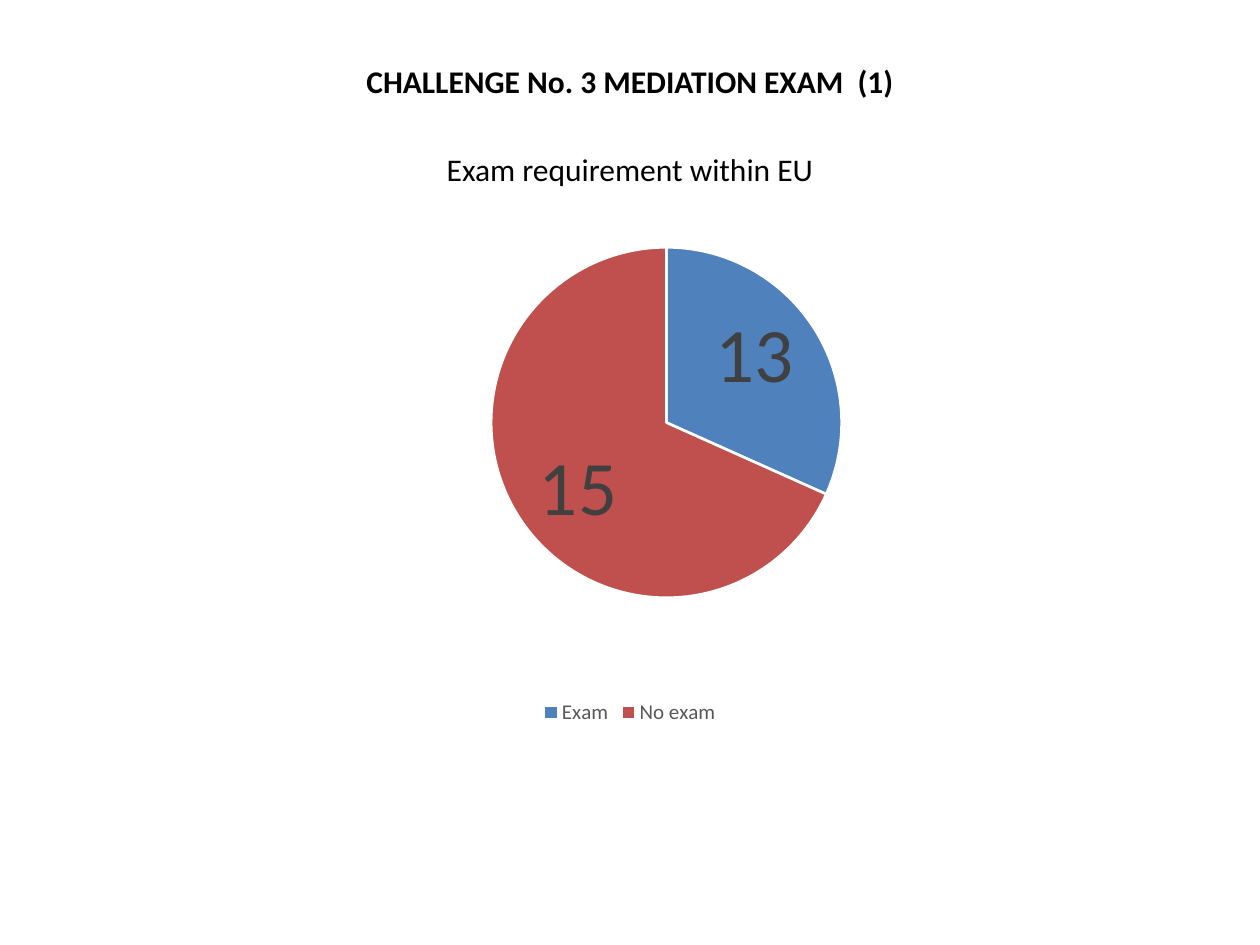
"""Build a slide with a pie chart of the mediation exam requirement within the EU."""
import lxml.etree
import pptx
import pptx.chart.data
import pptx.dml.color
import pptx.enum.chart
import pptx.enum.text
import pptx.oxml.ns
import pptx.util

RGB = pptx.dml.color.RGBColor
BLACK = RGB(0x00, 0x00, 0x00)
WHITE = RGB(0xFF, 0xFF, 0xFF)
BLUE = RGB(0x4F, 0x81, 0xBD)
RED = RGB(0xC0, 0x50, 0x4D)
DARK = RGB(0x40, 0x40, 0x40)
GREY = RGB(0x59, 0x59, 0x59)
FACE = "Calibri"

TITLE = "CHALLENGE No. 3 MEDIATION EXAM  (1)"
HEAD = "Exam requirement within EU"
PARTS = [("Exam", 13, "13", BLUE), ("No exam", 28, "15", RED)]
PLOT = {"x": 0.19, "y": 0.05, "w": 0.78, "h": 0.69}

TITLE_BOX = (54, 56, 1152, 50)
HEAD_BOX = (54, 144, 1152, 50)
CHART_BOX = (402, 222, 456, 508)


def px(num):
    return pptx.util.Emu(round(num * 914400 / 126))


def style(font, size, color, bold=False):
    font.name = FACE
    font.size = pptx.util.Pt(size)
    font.bold = bold
    font.color.rgb = color


def write(shape, box, text, bold):
    shape.left, shape.top, shape.width, shape.height = map(px, box)
    frame = shape.text_frame
    frame.word_wrap = True
    frame.vertical_anchor = pptx.enum.text.MSO_ANCHOR.MIDDLE
    para = frame.paragraphs[0]
    para.alignment = pptx.enum.text.PP_ALIGN.CENTER
    run = para.add_run()
    run.text = text
    style(run.font, 18, BLACK, bold)


def place_plot(chart):
    name = pptx.oxml.ns.qn
    area = chart.plots[0]._element.getparent()
    for old in area.findall(name("c:layout")):
        area.remove(old)
    outer = lxml.etree.Element(name("c:layout"))
    inner = lxml.etree.SubElement(outer, name("c:manualLayout"))
    rules = [("layoutTarget", "inner"), ("xMode", "edge"), ("yMode", "edge"), *PLOT.items()]
    for tag, val in rules:
        lxml.etree.SubElement(inner, name("c:" + tag)).set("val", str(val))
    area.insert(0, outer)


def add_pie(slide):
    data = pptx.chart.data.CategoryChartData()
    data.categories = [part[0] for part in PARTS]
    data.add_series("Series 1", [part[1] for part in PARTS])
    kind = pptx.enum.chart.XL_CHART_TYPE.PIE
    chart = slide.shapes.add_chart(kind, *map(px, CHART_BOX), data).chart
    style(chart.font, 10, BLACK)
    chart.has_title = False
    chart.has_legend = True
    chart.legend.position = pptx.enum.chart.XL_LEGEND_POSITION.BOTTOM
    chart.legend.include_in_layout = False
    style(chart.legend.font, 12, GREY)
    plot = chart.plots[0]
    plot.vary_by_categories = True
    series = plot.series[0]
    best = pptx.enum.chart.XL_LABEL_POSITION.BEST_FIT
    labels = series.data_labels
    labels.show_value = True
    labels.position = best
    style(labels.font, 44, DARK, True)
    for spot, (_, _, text, color) in enumerate(PARTS):
        point = series.points[spot]
        point.format.fill.solid()
        point.format.fill.fore_color.rgb = color
        point.format.line.color.rgb = WHITE
        point.format.line.width = pptx.util.Pt(1.5)
        label = point.data_label
        run = label.text_frame.paragraphs[0].add_run()
        run.text = text
        style(run.font, 44, DARK)
        label.position = best
    place_plot(chart)


def main():
    deck = pptx.Presentation()
    deck.slide_width, deck.slide_height = px(1260), px(945)
    slide = deck.slides.add_slide(deck.slide_layouts[5])
    write(slide.shapes.title, TITLE_BOX, TITLE, True)
    write(slide.shapes.add_textbox(0, 0, 0, 0), HEAD_BOX, HEAD, False)
    add_pie(slide)
    deck.save("out.pptx")


if __name__ == "__main__":
    main()
